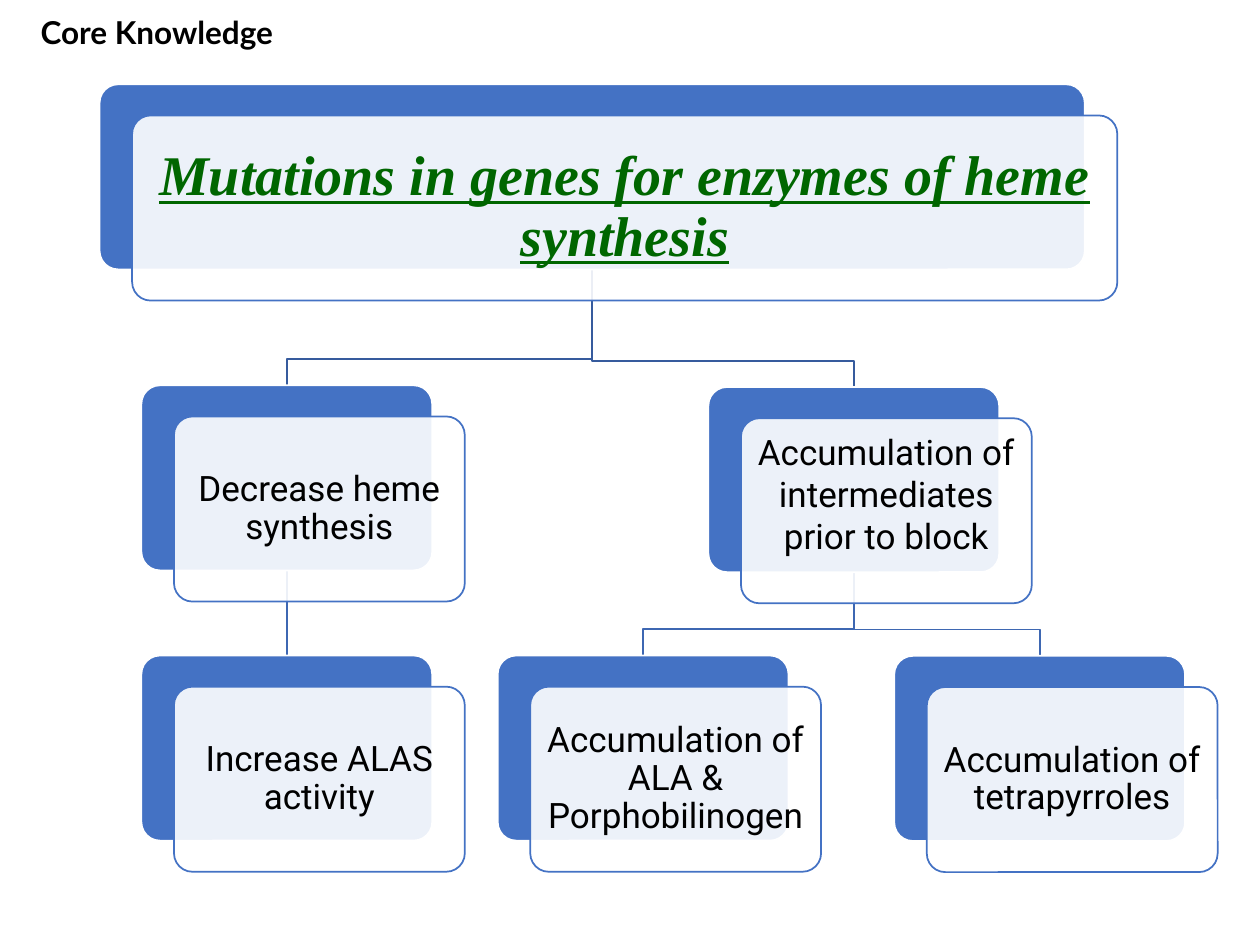
"""Builds the heme synthesis mutation hierarchy slide."""
from lxml import etree
from pptx import Presentation
from pptx.dml.color import RGBColor
from pptx.enum.shapes import MSO_CONNECTOR, MSO_SHAPE
from pptx.enum.text import MSO_ANCHOR, PP_ALIGN
from pptx.oxml.ns import qn
from pptx.util import Pt

ROUNDED = MSO_SHAPE.ROUNDED_RECTANGLE
STRAIGHT = MSO_CONNECTOR.STRAIGHT
MIDDLE = MSO_ANCHOR.MIDDLE
CENTER = PP_ALIGN.CENTER
WHITE = RGBColor(0xFF, 0xFF, 0xFF)
BLACK = RGBColor(0, 0, 0)
BLUE = RGBColor(0x44, 0x72, 0xC4)
UPPER_LINK = RGBColor(0x36, 0x5B, 0x9D)
LOWER_LINK = RGBColor(0x3E, 0x67, 0xB2)
GREEN = RGBColor(0, 0x66, 0)

BOX_W, BOX_H, ROOT_W = 166.2, 105.8, 563
SHIFT_X, SHIFT_Y, INNER, ELBOW = 18.6, 17.8, 3.1, 15

nodes = {
    "root": (56.9, 48.2, ROOT_W, "Mutations in genes for enzymes of heme synthesis"),
    "decrease": (80.8, 220.2, BOX_W, "Decrease heme synthesis"),
    "increase": (80.8, 374.6, BOX_W, "Increase ALAS activity"),
    "block": (404.8, 221.2, BOX_W, "Accumulation of intermediates prior to block"),
    "ala": (284.4, 374.6, BOX_W, "Accumulation of ALA & Porphobilinogen"),
    "tetra": (511, 374.8, BOX_W, "Accumulation of tetrapyrroles"),
}
links = [
    ("block", "tetra", LOWER_LINK),
    ("block", "ala", LOWER_LINK),
    ("root", "block", UPPER_LINK),
    ("decrease", "increase", LOWER_LINK),
    ("root", "decrease", UPPER_LINK),
]


def add_card(left, top, width, fill, line):
    sp = s.shapes.add_shape(ROUNDED, Pt(left), Pt(top), Pt(width), Pt(BOX_H))
    sp.adjustments[0] = 0.1
    sp.shadow.inherit = False
    sp.fill.solid()
    sp.fill.fore_color.rgb = fill
    sp.line.color.rgb = line
    sp.line.width = Pt(1)
    return sp


def add_label(left, top, width, height, text, font, size, color):
    sp = s.shapes.add_textbox(Pt(left), Pt(top), Pt(width), Pt(height))
    tf = sp.text_frame
    tf.text = text
    tf.word_wrap = True
    p = tf.paragraphs[0]
    p.alignment = CENTER
    p.line_spacing = 0.9
    r = p.runs[0]
    r.font.name = font
    r.font.size = Pt(size)
    r.font.color.rgb = color
    return tf, p, r


prs = Presentation()
prs.slide_width, prs.slide_height = Pt(720), Pt(540)
s = prs.slides.add_slide(prs.slide_layouts[6])

for parent, child, color in links:
    px, py, pw, _ = nodes[parent]
    cx, cy, cw, _ = nodes[child]
    x1, y1, x2 = px + pw / 2, py + BOX_H, cx + cw / 2
    if x1 == x2:
        sp = s.shapes.add_connector(STRAIGHT, Pt(x1), Pt(y1), Pt(x2), Pt(cy))
        etree.SubElement(sp._element.spPr, qn("a:effectLst"))
    else:
        path = s.shapes.build_freeform(Pt(x1), Pt(y1))
        bend = cy - ELBOW
        path.add_line_segments(
            [(Pt(x1), Pt(bend)), (Pt(x2), Pt(bend)), (Pt(x2), Pt(cy))], close=False)
        sp = path.convert_to_shape()
        sp.fill.background()
        sp.shadow.inherit = False
    sp.line.color.rgb = color
    sp.line.width = Pt(1)

for name, (left, top, width, text) in nodes.items():
    is_root = name == "root"
    add_card(left, top, width, BLUE, WHITE)
    front = add_card(left + SHIFT_X, top + SHIFT_Y, width, WHITE, BLUE)
    rgb = front._element.spPr.find(qn("a:solidFill"))[0]
    etree.SubElement(rgb, qn("a:alpha"), val="90000")
    font, size, color = ("Times New Roman", 32, GREEN) if is_root else ("Roboto", 20, BLACK)
    tf, p, r = add_label(left + SHIFT_X + INNER, top + SHIFT_Y + INNER, width - 2 * INNER,
                         BOX_H - 2 * INNER, text, font, size, color)
    tf.vertical_anchor = MIDDLE
    inset = Pt(9.6 if is_root else 6)
    tf.margin_left = tf.margin_right = tf.margin_top = tf.margin_bottom = inset
    if is_root:
        r.font.bold = r.font.italic = r.font.underline = True
    if name == "block":
        p.line_spacing = 1.0
        tf.margin_top, tf.margin_bottom = Pt(0), Pt(20)

tf, p, r = add_label(12.2, 6.5, 154.8, 26.6, "Core Knowledge", "Lato", 18, BLACK)
tf.word_wrap = False
r.font.bold = True

prs.save("out.pptx")
